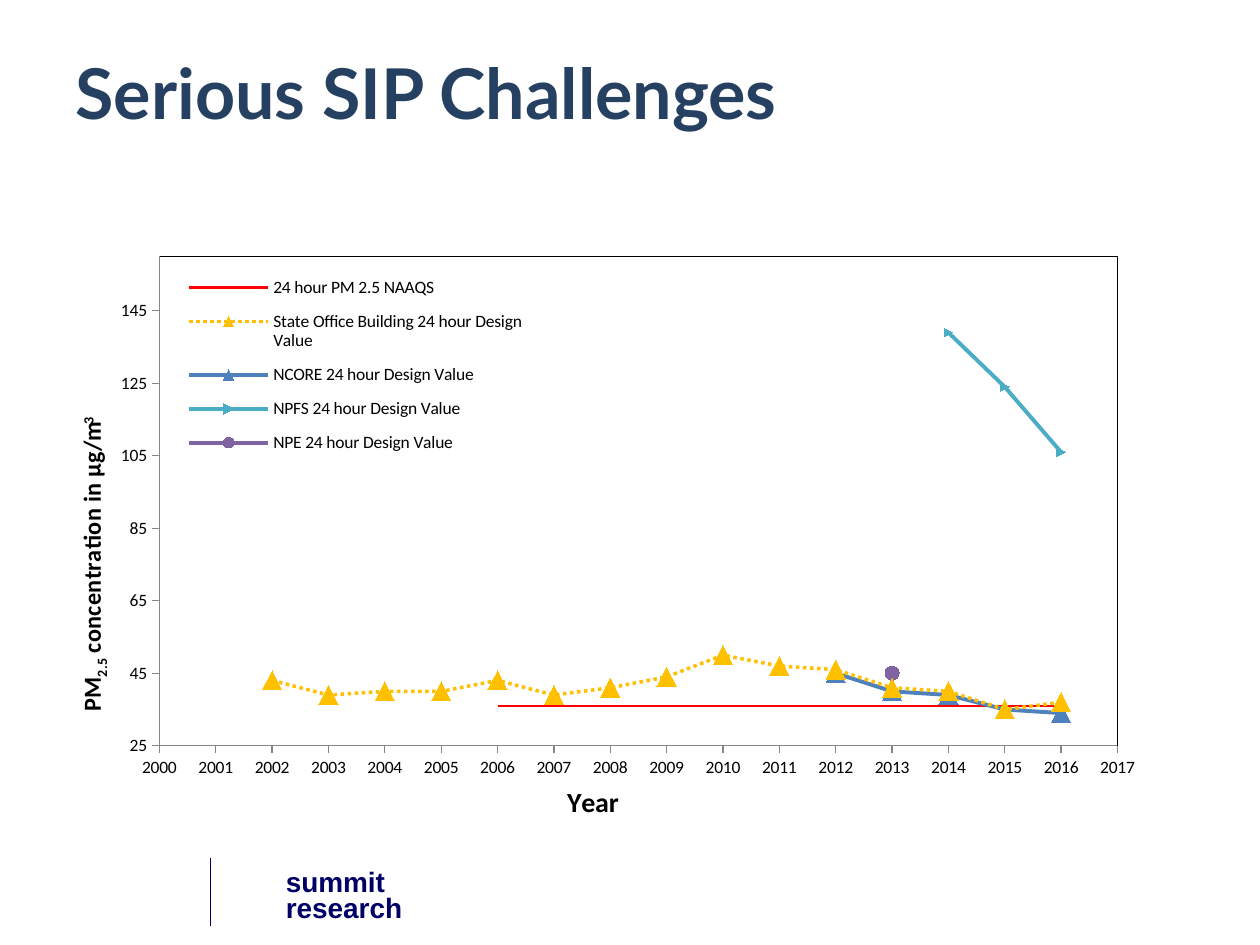
from lxml import etree
from pptx import Presentation
from pptx.chart.data import XyChartData
from pptx.dml.color import RGBColor
from pptx.enum.chart import XL_CHART_TYPE as ChartType, XL_LEGEND_POSITION as LegendPosition
from pptx.enum.chart import XL_MARKER_STYLE as Marker, XL_TICK_MARK as TickMark
from pptx.enum.dml import MSO_LINE
from pptx.enum.shapes import MSO_CONNECTOR
from pptx.enum.text import MSO_ANCHOR, PP_ALIGN
from pptx.oxml import parse_xml
from pptx.oxml.ns import nsdecls, qn
from pptx.util import Inches, Pt

BLACK = RGBColor(0, 0, 0)
GRAY = RGBColor(0x86, 0x86, 0x86)
NAVY = RGBColor(0x01, 0x00, 0x66)
TITLE_BLUE = RGBColor(0x25, 0x40, 0x61)
RED = RGBColor(0xFF, 0x00, 0x00)
GOLD = RGBColor(0xFF, 0xC0, 0x00)
BLUE = RGBColor(0x4F, 0x81, 0xBD)
TEAL = RGBColor(0x4B, 0xAC, 0xC6)
PURPLE = RGBColor(0x80, 0x64, 0xA2)

SERIES = [
    ("24 hour PM 2.5 NAAQS", 2000, [66] * 7, RED, 1.5, None, 0),
    ("State Office Building 24 hour Design Value", 2000,
     [None, None, 43, 39, 40, 40, 43, 39, 41, 44, 50, 47, 46, 41, 40, 35, 37],
     GOLD, 2, Marker.TRIANGLE, 11),
    ("NCORE 24 hour Design Value", 2012, [45, 40, 39, 35, 34], BLUE, 2.25, Marker.TRIANGLE, 11),
    ("NPFS 24 hour Design Value", 2012, [None, None, 139, 124, 106], TEAL, 2.25, Marker.DOT, 5),
    ("NPE 24 hour Design Value", 2013, [45], PURPLE, 2.25, Marker.CIRCLE, 8),
    ("Series 6", 2006, [36] * 11, RED, 1.5, None, 0),
]


def add_text(paragraph, text, font="Calibri", size=10, color=BLACK, bold=True, baseline=0):
    run = paragraph.add_run()
    run.text = text
    run.font.name = font
    run.font.size = Pt(size)
    run.font.bold = bold
    run.font.color.rgb = color
    if baseline:
        run.font._element.set("baseline", str(baseline))


def set_layout(element, index, **settings):
    for layout in element.findall(qn("c:layout")):
        element.remove(layout)
    layout = parse_xml(f"<c:layout {nsdecls('c')}><c:manualLayout/></c:layout>")
    for name, value in settings.items():
        etree.SubElement(layout[0], qn(f"c:{name}")).set("val", str(value))
    element.insert(index, layout)


class SlideBuilder:
    def __init__(self, slide):
        self.slide = slide

    def title(self, text):
        shape = self.slide.shapes.title
        shape.left, shape.top, shape.width, shape.height = map(Inches, (0.5, 0.3, 9, 0.86))
        shape.text_frame.vertical_anchor = MSO_ANCHOR.MIDDLE
        paragraph = shape.text_frame.paragraphs[0]
        paragraph.alignment = PP_ALIGN.LEFT
        add_text(paragraph, text, font="Lato", size=40, color=TITLE_BLUE)

    def lines_of_text(self, lines, left, top, width, height):
        frame = self.slide.shapes.add_textbox(*map(Inches, (left, top, width, height))).text_frame
        for index, line in enumerate(lines):
            paragraph = frame.add_paragraph() if index else frame.paragraphs[0]
            paragraph.line_spacing = Pt(15)
            add_text(paragraph, line, font="Arial", size=16, color=NAVY)

    def line(self, *ends):
        connector = self.slide.shapes.add_connector(MSO_CONNECTOR.STRAIGHT, *map(Inches, ends))
        connector.line.color.rgb = NAVY
        connector.line.width = Pt(1)
        etree.SubElement(connector._element.spPr, qn("a:effectLst"))

    def axis(self, axis, minimum, maximum, step, title_runs, x, y):
        axis.minimum_scale, axis.maximum_scale, axis.major_unit = minimum, maximum, step
        axis.has_major_gridlines = False
        axis.major_tick_mark = TickMark.OUTSIDE
        axis.minor_tick_mark = TickMark.NONE
        axis.tick_labels.number_format = "General"
        axis.tick_labels.number_format_is_linked = False
        axis.format.line.color.rgb = GRAY
        axis.format.line.width = Pt(0.75)
        paragraph = axis.axis_title.text_frame.paragraphs[0]
        for text, size, baseline in title_runs:
            add_text(paragraph, text, size=size, baseline=baseline)
        set_layout(axis.axis_title._element, 1, xMode="edge", yMode="edge", x=x, y=y)

    def chart(self, left, top, width, height):
        data = XyChartData()
        for name, first_year, values, *_ in SERIES:
            points = data.add_series(name)
            for year, value in enumerate(values, first_year):
                points.add_data_point(year, value)
        chart = self.slide.shapes.add_chart(
            ChartType.XY_SCATTER_LINES, *map(Inches, (left, top, width, height)), data).chart
        for point in list(chart._chartSpace.iter(qn("c:pt"))):
            if point.findtext(qn("c:v")) in ("None", ""):
                point.getparent().remove(point)
        chart.has_title = False
        chart.font.name = "Calibri"
        chart.font.size = Pt(10)
        chart.font.color.rgb = BLACK
        plot = chart.plots[0]
        plot.vary_by_categories = False
        for series, (_, _, _, color, weight, marker, size) in zip(plot.series, SERIES):
            self.style_series(series, color, weight, marker, size)

        self.axis(chart.category_axis, 2000, 2017, 1, [("Year", 16, 0)], 0.44, 0.93)
        self.axis(chart.value_axis, 25, 160, 20,
                  [("PM", 14, 0), ("2.5", 14, -25000), (" concentration in µg/m", 14, 0),
                   ("3", 14, 30000)], 0.007, 0.31)
        body = chart.value_axis.axis_title.text_frame._txBody.find(qn("a:bodyPr"))
        body.set("rot", "-5400000")
        body.set("vert", "horz")

        chart.has_legend = True
        chart.legend.position = LegendPosition.RIGHT
        chart.legend.include_in_layout = False
        chart.legend.font.size = Pt(10)
        set_layout(chart.legend._element, 1, xMode="edge", yMode="edge",
                   x=0.103, y=0.056, w=0.31, h=0.345)
        chart.legend._element.insert(1, parse_xml(
            f'<c:legendEntry {nsdecls("c")}><c:idx val="{len(SERIES) - 1}"/>'
            '<c:delete val="1"/></c:legendEntry>'))
        area = chart._chartSpace.chart.plotArea
        set_layout(area, 0, layoutTarget="inner", xMode="edge", yMode="edge",
                   x=0.085, y=0.044, w=0.845, h=0.83)
        area.append(parse_xml(
            f'<c:spPr {nsdecls("c", "a")}><a:noFill/><a:ln w="9525"><a:solidFill>'
            f'<a:srgbClr val="{BLACK}"/></a:solidFill></a:ln></c:spPr>'))

    def style_series(self, series, color, weight, marker, size):
        series.smooth = False
        series.format.line.color.rgb = color
        series.format.line.width = Pt(weight)
        if color == GOLD:
            series.format.line.dash_style = MSO_LINE.ROUND_DOT
        series.marker.style = marker or Marker.NONE
        if marker:
            series.marker.size = size
            series.marker.format.fill.solid()
            series.marker.format.fill.fore_color.rgb = color
            series.marker.format.line.color.rgb = color


def main():
    presentation = Presentation()
    presentation.slide_width, presentation.slide_height = Inches(10), Inches(7.5)
    builder = SlideBuilder(presentation.slides.add_slide(presentation.slide_layouts[5]))
    builder.lines_of_text(["summit", "research"], 2.17, 6.87, 1.14, 0.52)
    builder.line(1.67, 6.81, 1.67, 7.35)
    builder.title("Serious SIP Challenges")
    builder.chart(0.5, 1.83, 9, 4.75)
    presentation.save("out.pptx")


if __name__ == "__main__":
    main()
